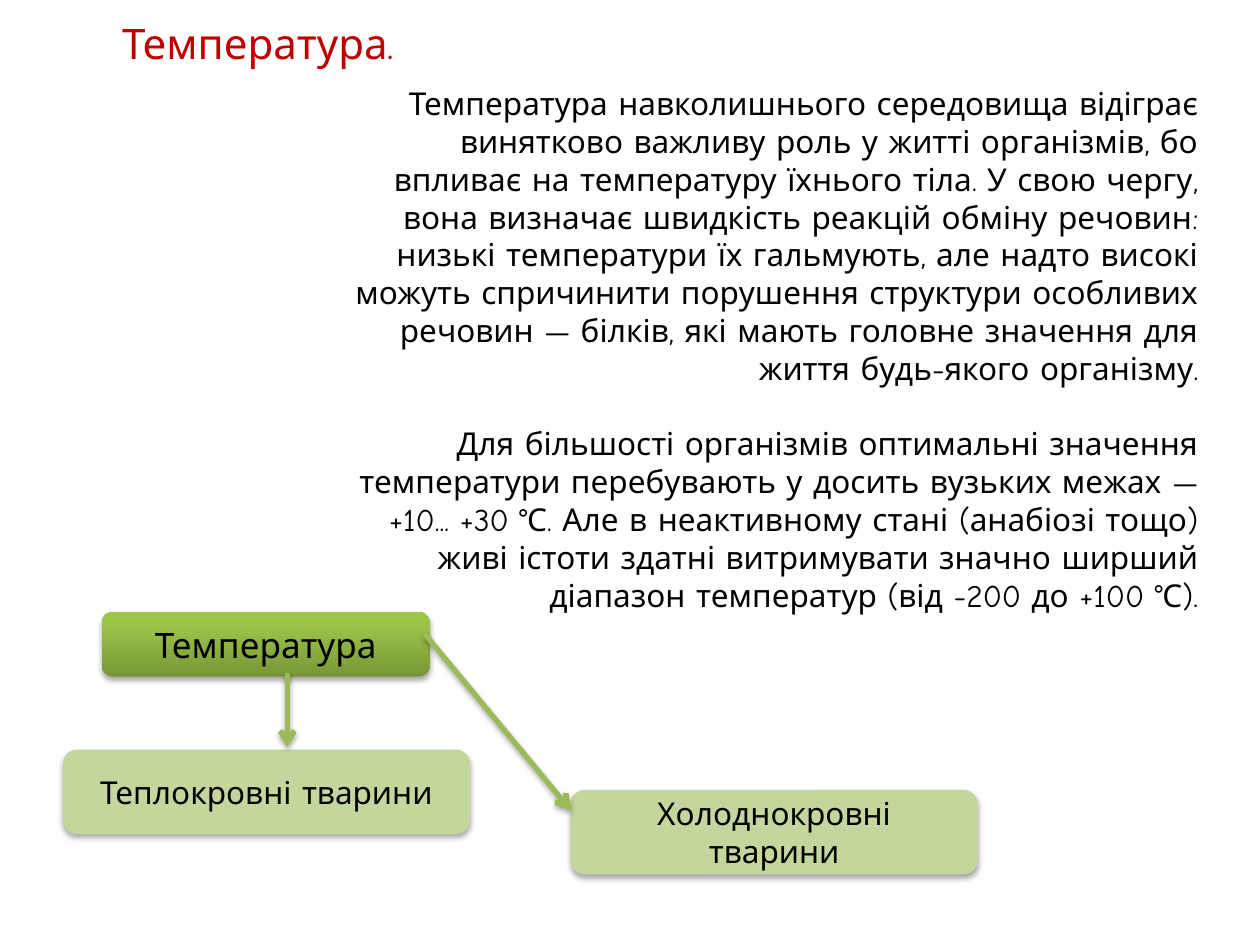
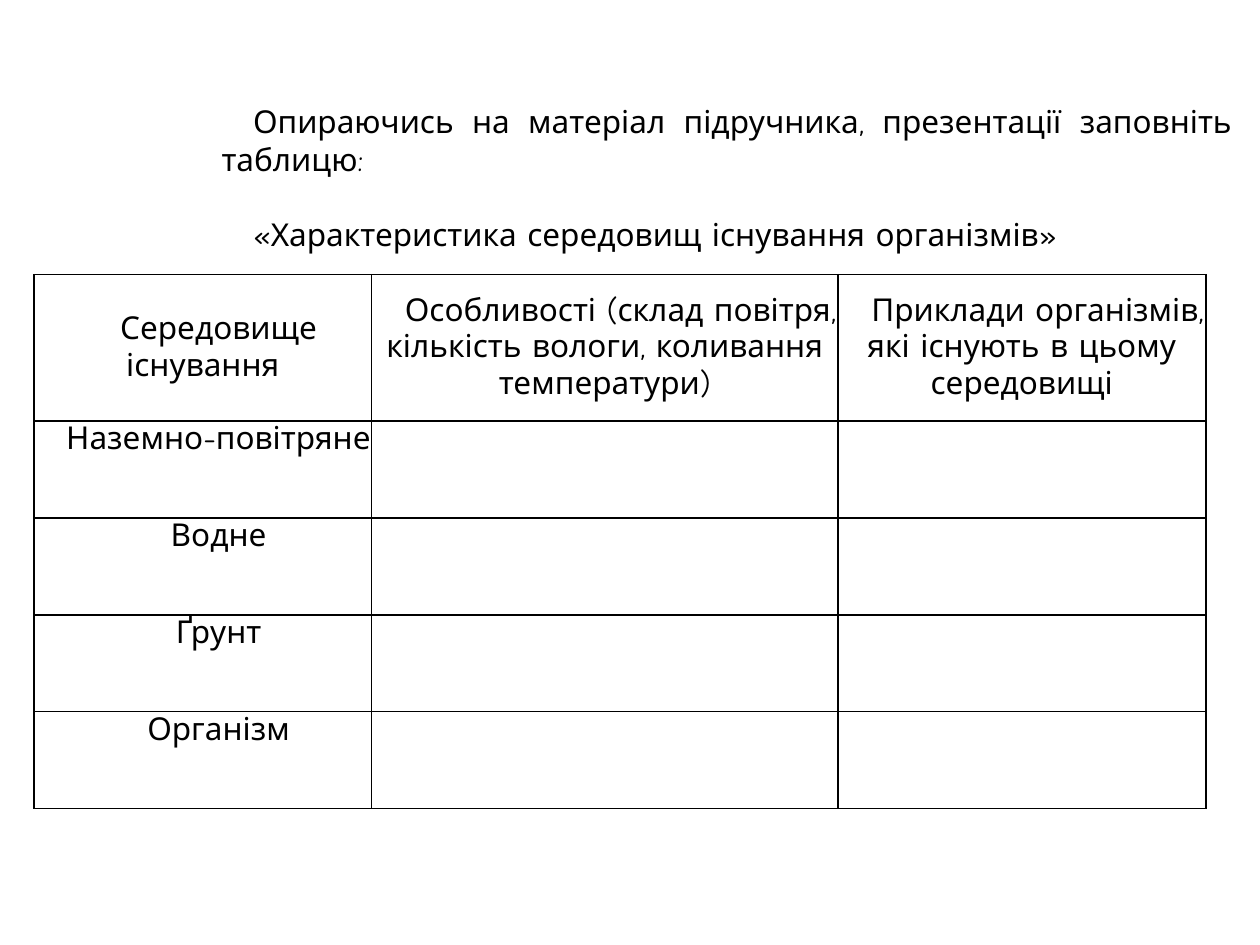
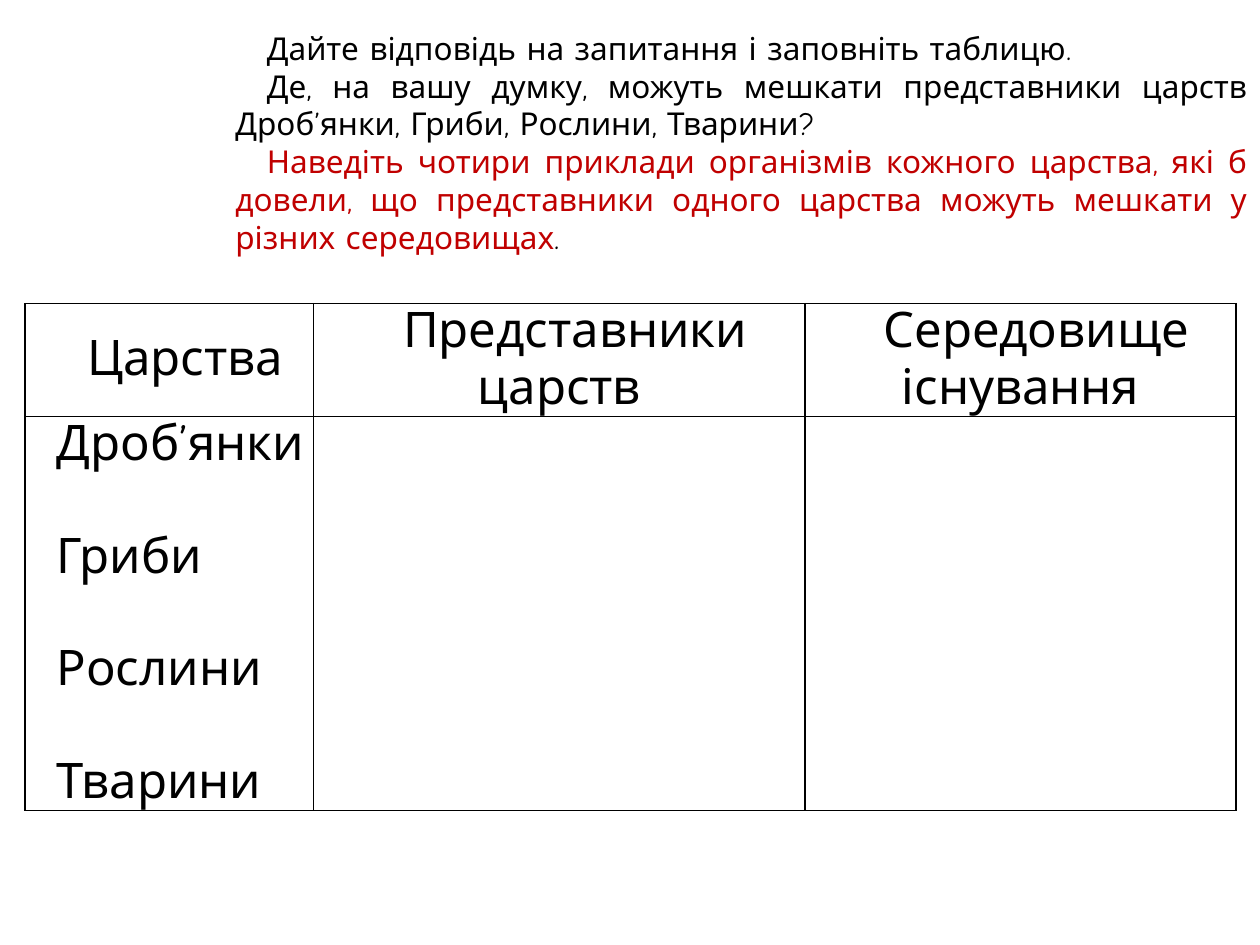
from copy import deepcopy

from pptx import Presentation
from pptx.dml.color import RGBColor
from pptx.enum.dml import MSO_LINE
from pptx.enum.shapes import MSO_CONNECTOR, MSO_SHAPE
from pptx.enum.text import MSO_ANCHOR as Anchor, MSO_AUTO_SIZE as AutoSize, PP_ALIGN as Align
from pptx.oxml import parse_xml
from pptx.oxml.ns import nsdecls, qn
from pptx.util import Inches, Pt

# Shared style
FONT = "Comic Neue"
BLACK = RGBColor(0x00, 0x00, 0x00)
WHITE = RGBColor(0xFF, 0xFF, 0xFF)
RED = RGBColor(0xC0, 0x00, 0x00)
PALE_GREEN = RGBColor(0xC3, 0xD6, 0x9B)
ARROW_GREEN = RGBColor(0x9B, 0xBB, 0x59)
GREEN_STOPS = [
    (0, RGBColor(0x77, 0x97, 0x37)),
    (0.8, RGBColor(0x9B, 0xC3, 0x48)),
    (1, RGBColor(0x9D, 0xC7, 0x46)),
]
BODY_SIZE = 18
FIRST_LINE = 0.25
TITLE_ONLY, BLANK = 5, 6


def write_text(frame, paragraphs, size=BODY_SIZE, align=Align.LEFT, indent=0, gaps=()):
    """Each paragraph is a list of (text, colour) runs; gaps maps its index to points before it."""
    gaps = dict(gaps)
    for index, runs in enumerate(paragraphs):
        paragraph = frame.paragraphs[0] if index == 0 else frame.add_paragraph()
        paragraph.alignment = align
        if indent:
            properties = paragraph._p.get_or_add_pPr()
            properties.set("marL", "0")
            properties.set("indent", str(Inches(indent)))
        if index in gaps:
            paragraph.space_before = Pt(gaps[index])
        for text, color in runs:
            run = paragraph.add_run()
            run.text = text
            run.font.name = FONT
            run.font.size = Pt(size)
            run.font.color.rgb = color


def black(*texts):
    return [[(text, BLACK)] for text in texts]


def add_title(slide, text, left, top, width, height):
    title = slide.shapes.title
    title.left, title.top = Inches(left), Inches(top)
    title.width, title.height = Inches(width), Inches(height)
    frame = title.text_frame
    frame.word_wrap = False
    frame.auto_size = AutoSize.SHAPE_TO_FIT_TEXT
    frame.vertical_anchor = Anchor.TOP
    write_text(frame, [[(text, RED)]], size=24)


def add_text(slide, paragraphs, left, top, width, height, **style):
    box = slide.shapes.add_textbox(Inches(left), Inches(top), Inches(width), Inches(height))
    box.text_frame.word_wrap = True
    box.text_frame.auto_size = AutoSize.SHAPE_TO_FIT_TEXT
    write_text(box.text_frame, paragraphs, **style)


def add_shadow(shape):
    properties = shape._element.spPr
    for old in properties.findall(qn("a:effectLst")):
        properties.remove(old)
    properties.append(parse_xml(
        f'<a:effectLst {nsdecls("a")}>'
        '<a:outerShdw blurRad="40000" dist="23000" dir="5400000" rotWithShape="0">'
        '<a:srgbClr val="000000"><a:alpha val="35000"/></a:srgbClr>'
        '</a:outerShdw></a:effectLst>'))


def fill_green_gradient(shape):
    fill = shape.fill
    fill.gradient()
    fill.gradient_angle = 90
    stop_list = shape._element.spPr.find(".//" + qn("a:gsLst"))
    stop_list.append(deepcopy(stop_list[-1]))
    for stop, (position, color) in zip(fill.gradient_stops, GREEN_STOPS):
        stop.position = position
        stop.color.rgb = color


def add_box(slide, text, left, top, width, height, size=BODY_SIZE, gradient=False):
    box = slide.shapes.add_shape(MSO_SHAPE.ROUNDED_RECTANGLE, Inches(left), Inches(top),
                                 Inches(width), Inches(height))
    if gradient:
        fill_green_gradient(box)
    else:
        box.fill.solid()
        box.fill.fore_color.rgb = PALE_GREEN
    box.line.fill.background()
    add_shadow(box)
    box.text_frame.word_wrap = True
    box.text_frame.vertical_anchor = Anchor.MIDDLE
    write_text(box.text_frame, black(text), size=size, align=Align.CENTER)


def add_arrow(slide, start, end):
    arrow = slide.shapes.add_connector(MSO_CONNECTOR.STRAIGHT,
                                       *(Inches(value) for value in (*start, *end)))
    arrow.line.color.rgb = ARROW_GREEN
    arrow.line.width = Pt(3)
    arrow.line.dash_style = MSO_LINE.SOLID
    arrow.line._get_or_add_ln().append(parse_xml(f'<a:tailEnd {nsdecls("a")} type="arrow"/>'))
    add_shadow(arrow)


def format_cell(cell, is_header):
    cell.margin_left = cell.margin_right = cell.margin_top = cell.margin_bottom = 0
    cell.vertical_anchor = Anchor.MIDDLE if is_header else Anchor.TOP
    properties = cell._tc.get_or_add_tcPr()
    for side in ("lnL", "lnR", "lnT", "lnB"):
        properties.append(parse_xml(
            f'<a:{side} {nsdecls("a")} w="12700"><a:solidFill>'
            f'<a:srgbClr val="{BLACK}"/></a:solidFill></a:{side}>'))
    if is_header:
        cell.fill.background()
    else:
        cell.fill.solid()
        cell.fill.fore_color.rgb = WHITE


def add_table(slide, left, top, widths, heights, headers, size):
    """Add a ruled table with centred headers and an empty body."""
    table = slide.shapes.add_table(len(heights), len(widths), Inches(left), Inches(top),
                                   Inches(sum(widths)), Inches(sum(heights))).table
    table.first_row = table.horz_banding = False
    for column, width in zip(table.columns, widths):
        column.width = Inches(width)
    for index, (row, height) in enumerate(zip(table.rows, heights)):
        row.height = Inches(height)
        for cell in row.cells:
            format_cell(cell, is_header=index == 0)
    for cell, header in zip(table.rows[0].cells, headers):
        write_text(cell.text_frame, black(header), size, Align.CENTER, FIRST_LINE)
    return table


def build_temperature_slide(presentation):
    slide = presentation.slides.add_slide(presentation.slide_layouts[TITLE_ONLY])
    add_text(slide, black(
        "Температура навколишнього середовища відіграє винятково важливу роль у житті "
        "організмів, бо впливає на температуру їхнього тіла. У свою чергу, вона визначає "
        "швидкість реакцій обміну речовин: низькі температури їх гальмують, але надто високі "
        "можуть спричинити порушення структури особливих речовин — білків, які мають головне "
        "значення для життя будь-якого організму.",
        "Для більшості організмів оптимальні значення температури перебувають у досить вузьких "
        "межах — +10... +30 °С. Але в неактивному стані (анабіозі тощо) живі істоти здатні "
        "витримувати значно ширший діапазон температур (від -200 до +100 °С).",
    ), 2.68, 0.62, 6.93, 4.34, align=Align.RIGHT, gaps={1: 21.6})
    add_title(slide, "Температура.", 0.87, 0.09, 2.49, 0.5)

    # Scheme of animal groups
    add_box(slide, "Температура", 0.81, 4.86, 2.6, 0.51, size=20, gradient=True)
    add_box(slide, "Теплокровні тварини", 0.5, 5.95, 3.23, 0.67)
    add_box(slide, "Холоднокровні тварини", 4.53, 6.27, 3.23, 0.67)
    add_arrow(slide, (2.28, 5.34), (2.28, 5.93))
    add_arrow(slide, (3.37, 5.03), (4.53, 6.43))


def build_environments_slide(presentation):
    slide = presentation.slides.add_slide(presentation.slide_layouts[BLANK])
    environments = ["Наземно-повітряне", "Водне", "Ґрунт", "Організм"]
    table = add_table(
        slide, 0.27, 2.18, [2.68, 3.7, 2.92], [1.16] + [0.77] * len(environments),
        ["Середовище існування",
         "Особливості (склад повітря, кількість вологи, коливання температури)",
         "Приклади організмів, які існують в цьому середовищі"], BODY_SIZE)
    for row, environment in enumerate(environments, start=1):
        write_text(table.cell(row, 0).text_frame, black(environment),
                   align=Align.CENTER, indent=FIRST_LINE)
    add_text(slide, black(
        "Опираючись на матеріал підручника, презентації заповніть таблицю:",
        "«Характеристика середовищ існування організмів»",
    ), 1.66, 0.76, 8.22, 1.31, align=Align.JUSTIFY, indent=FIRST_LINE, gaps={1: 21.6})


def build_kingdoms_slide(presentation):
    slide = presentation.slides.add_slide(presentation.slide_layouts[BLANK])
    table = add_table(slide, 0.2, 2.41, [2.29, 3.9, 3.42], [0.89, 3.13],
                      ["Царства", "Представники царств", "Середовище існування"], 28)
    kingdoms = black("Дроб’янки", "Гриби", "Рослини", "Тварини")
    write_text(table.cell(1, 0).text_frame, kingdoms, 28, Align.JUSTIFY, FIRST_LINE,
               gaps={index: 32.2 for index in range(1, len(kingdoms))})
    add_text(slide, black(
        "Дайте відповідь на запитання і заповніть таблицю.",
        "Де, на вашу думку, можуть мешкати представники царств Дроб’янки, Гриби, Рослини, "
        "Тварини?",
    ) + [[
        ("Наведіть чотири приклади організмів кожного царства, які б довели, що представники "
         "одного царства можуть мешкати у різних середовищах", RED),
        (".", BLACK),
    ]], 1.77, 0.18, 8.23, 2.22, align=Align.JUSTIFY, indent=FIRST_LINE)


def main():
    presentation = Presentation()
    presentation.slide_width, presentation.slide_height = Inches(10), Inches(7.5)
    build_temperature_slide(presentation)
    build_environments_slide(presentation)
    build_kingdoms_slide(presentation)
    presentation.save("out.pptx")


if __name__ == "__main__":
    main()
